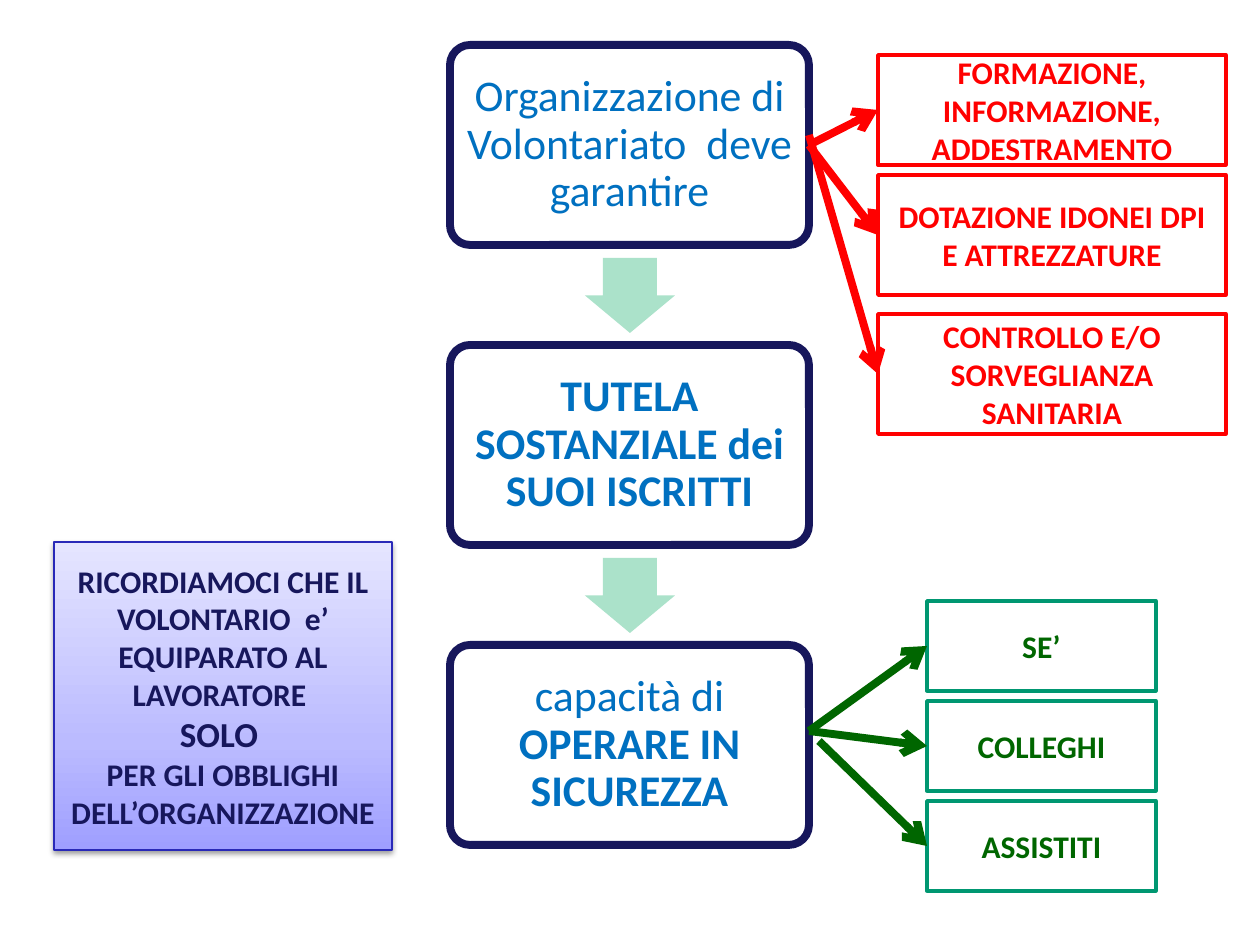
from copy import deepcopy
from dataclasses import dataclass

from lxml import etree
from pptx import Presentation
from pptx.dml.color import RGBColor
from pptx.enum.shapes import MSO_CONNECTOR, MSO_SHAPE
from pptx.enum.text import MSO_ANCHOR, PP_ALIGN
from pptx.oxml.ns import qn
from pptx.util import Pt

RECT = MSO_SHAPE.RECTANGLE
ROUNDED = MSO_SHAPE.ROUNDED_RECTANGLE
DOWN_ARROW = MSO_SHAPE.DOWN_ARROW
STRAIGHT = MSO_CONNECTOR.STRAIGHT
CENTER = PP_ALIGN.CENTER
MIDDLE = MSO_ANCHOR.MIDDLE
LEFT_SIDE, RIGHT_SIDE = 1, 3
EMU_PER_PX = 914400 / 126


@dataclass(frozen=True)
class Theme:
    """Colours, font and type sizes of the slide."""
    font: str = "Calibri"
    white: str = "FFFFFF"
    navy: str = "17175C"
    blue: str = "0070C0"
    mint: str = "ABE2CA"
    teal: str = "009771"
    green: str = "006600"
    red: str = "FF0000"
    note_line: str = "2929B8"
    note_stops: tuple = ((0, "9F9FFF"), (0.35, "BBBBFF"), (1, "E5E5FF"))
    step_size: int = 25
    label_size: int = 18
    accent_size: int = 20
    thick: float = 4.5
    medium: float = 2
    thin: float = 0.75


def px(length):
    """Turn px into EMU."""
    return round(length * EMU_PER_PX)


def rgb(code):
    """Turn a hex code into a colour."""
    return RGBColor.from_string(code)


class Board:
    """Draws the elements of one slide in one style."""

    def __init__(self, slide, theme):
        self.slide = slide
        self.theme = theme

    def block(self, kind, box, fill, line=None, width=0):
        """Draw a preset shape without a shadow."""
        shape = self.slide.shapes.add_shape(kind, *map(px, box))
        shape.shadow.inherit = False
        shape.fill.solid()
        shape.fill.fore_color.rgb = rgb(fill)
        if line:
            shape.line.color.rgb = rgb(line)
            shape.line.width = Pt(width)
        else:
            shape.line.fill.background()
        return shape

    def set_text(self, shape, text, color, size, bold=True):
        """Centre text in a shape, one paragraph a line."""
        frame = shape.text_frame
        frame.text = text
        frame.word_wrap = True
        frame.vertical_anchor = MIDDLE
        for paragraph in frame.paragraphs:
            paragraph.alignment = CENTER
            for run in paragraph.runs:
                self.style_run(run, color, size, bold)
        return frame

    def style_run(self, run, color, size, bold):
        """Set the font of a run."""
        run.font.name = self.theme.font
        run.font.size = Pt(size)
        run.font.bold = bold
        run.font.color.rgb = rgb(color)

    def step(self, box, plain, strong):
        """Draw a rounded step with a plain and a bold part."""
        theme = self.theme
        shape = self.block(ROUNDED, box, theme.white, theme.navy, theme.thick)
        shape.adjustments[0] = 0.1
        frame = self.set_text(shape, plain, theme.blue, theme.step_size, False)
        frame.margin_left = frame.margin_right = px(7)
        paragraph = frame.paragraphs[0]
        paragraph.line_spacing = 0.9
        if strong:
            run = paragraph.add_run()
            run.text = strong
            self.style_run(run, theme.blue, theme.step_size, True)
        return shape

    def down_arrow(self, box):
        """Draw the arrow between two steps."""
        arrow = self.block(DOWN_ARROW, box, self.theme.mint)
        arrow.adjustments[0] = 0.6
        arrow.adjustments[1] = 0.5

    def label(self, box, text, color, line):
        """Draw an outlined label."""
        theme = self.theme
        shape = self.block(RECT, box, theme.white, line, theme.medium)
        self.set_text(shape, text, color, theme.label_size)
        return shape

    def link(self, start, label, color, source=None):
        """Draw an arrow from a point to the left side of a label."""
        link = self.slide.shapes.add_connector(
            STRAIGHT, *map(px, start), label.left, label.top + label.height // 2)
        if source is not None:
            link.begin_connect(source, RIGHT_SIDE)
        link.end_connect(label, LEFT_SIDE)
        link.line.color.rgb = rgb(color)
        link.line.width = Pt(self.theme.thick)
        properties = link._element.spPr
        etree.SubElement(properties.find(qn("a:ln")), qn("a:tailEnd"), type="arrow")
        etree.SubElement(properties, qn("a:effectLst"))

    def note(self, box, text, accent):
        """Draw the shaded note, with one larger paragraph."""
        theme = self.theme
        shape = self.block(RECT, box, theme.white, theme.note_line, theme.thin)
        shape.fill.gradient()
        shape.fill.gradient_angle = 90
        properties = shape._element.spPr
        stop_list = properties.find(".//" + qn("a:gsLst"))
        stop_list.append(deepcopy(stop_list[-1]))
        for stop, (position, color) in zip(shape.fill.gradient_stops, theme.note_stops):
            stop.position = position
            stop.color.rgb = rgb(color)
        shadow = etree.SubElement(
            properties.find(qn("a:effectLst")), qn("a:outerShdw"),
            blurRad=str(Pt(3.1)), dist=str(Pt(1.6)), dir="5400000", rotWithShape="0")
        tint = etree.SubElement(shadow, qn("a:srgbClr"), val="000000")
        etree.SubElement(tint, qn("a:alpha"), val="38000")
        frame = self.set_text(shape, text, theme.navy, theme.label_size)
        frame.paragraphs[accent].runs[0].font.size = Pt(theme.accent_size)


def main():
    """Build and save the slide."""
    deck = Presentation()
    deck.slide_width, deck.slide_height = px(1260), px(945)
    theme = Theme()
    board = Board(deck.slides.add_slide(deck.slide_layouts[6]), theme)

    step_texts = (
        ("Organizzazione di Volontariato  deve garantire", ""),
        ("", "TUTELA SOSTANZIALE dei SUOI ISCRITTI"),
        ("capacità di ", "OPERARE IN SICUREZZA"),
    )
    steps = [board.step((450, 45 + 300 * row, 359, 200), *texts)
             for row, texts in enumerate(step_texts)]
    for row in range(len(steps) - 1):
        board.down_arrow((585, 258 + 300 * row, 90, 75))

    beneficiaries = [
        board.label((927, 601 + 100 * row, 229, 90), text, theme.green, theme.teal)
        for row, text in enumerate(("SE’", "COLLEGHI", "ASSISTITI"))]
    for start, label in zip(((809, 731), (809, 731), (819, 741)), beneficiaries):
        board.link(start, label, theme.green)

    board.note(
        (54, 542, 338, 308),
        "RICORDIAMOCI CHE IL VOLONTARIO  e’ EQUIPARATO AL LAVORATORE \n"
        "SOLO \nPER GLI OBBLIGHI DELL’ORGANIZZAZIONE", accent=1)

    duties = [
        board.label((878, top, 348, height), text, theme.red, theme.red)
        for top, height, text in (
            (55, 110, "FORMAZIONE, INFORMAZIONE, ADDESTRAMENTO"),
            (175, 120, "DOTAZIONE IDONEI DPI E ATTREZZATURE"),
            (314, 120, "CONTROLLO E/O SORVEGLIANZA SANITARIA"))]
    for duty in duties[:2]:
        board.link((809, 145), duty, theme.red, steps[0])
    board.link((809, 135), duties[2], theme.red)

    deck.save("out.pptx")


if __name__ == "__main__":
    main()
